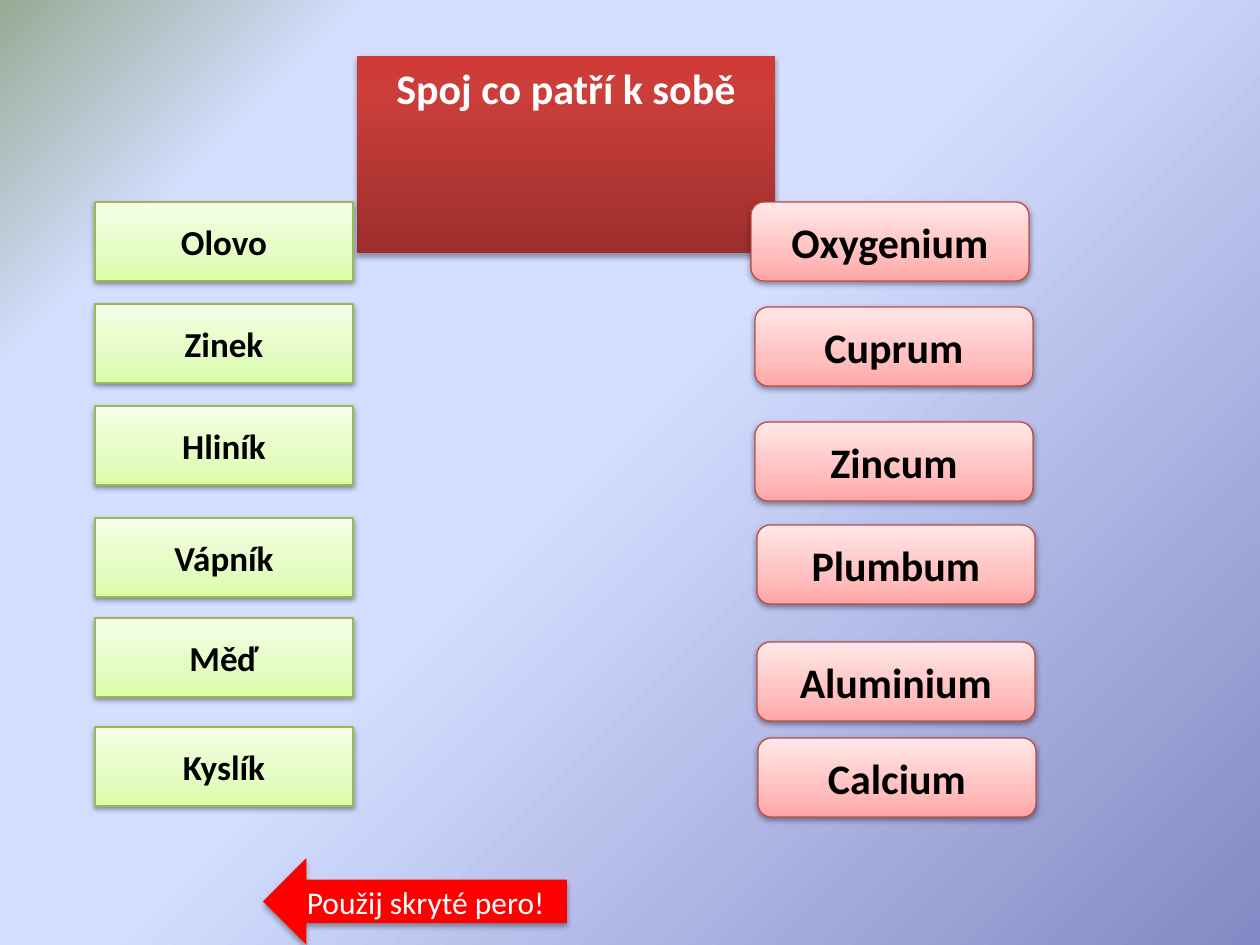
from pptx import Presentation, oxml, util as u
from pptx.dml.color import RGBColor
from pptx.enum import shapes, text
from pptx.oxml import ns

SCALE = 914400 / 126
FONT = "Calibri"
COLORS = {
    "white": "FFFFFF", "black": "000000", "arrow": "FF0000",
    "czech_line": "98B955", "latin_line": "BF4C48",
}
GRADIENTS = {
    "background": [(0, "8488C4"), (53, "D4DEFF"), (83, "D4DEFF"), (100, "96AB94")],
    "title": [(0, "9C2F2D"), (80, "CB3E3A"), (100, "CE3B37")],
    "czech": [(0, "DAFDA7"), (35, "E4FCC2"), (100, "F5FFE7")],
    "latin": [(0, "FFA6A5"), (35, "FFC0BF"), (100, "FFE7E7")],
}
UPWARD = '<a:lin ang="16200000" scaled="0"/>'
FROM_CORNER = '<a:path path="circle"><a:fillToRect l="100000" t="100000"/></a:path>'
CZECH_NAMES = [("Olovo", 202), ("Zinek", 304), ("Hliník", 406),
               ("Vápník", 518), ("Měď", 618), ("Kyslík", 727)]
LATIN_NAMES = [("Oxygenium", 751, 202), ("Cuprum", 755, 307), ("Zincum", 755, 422),
               ("Plumbum", 757, 525), ("Aluminium", 757, 642), ("Calcium", 758, 738)]


def px(value):
    return u.Emu(round(value * SCALE))


def color(name):
    return RGBColor.from_string(COLORS[name])


class SlideBuilder:
    def __init__(self, presentation):
        self.slide = presentation.slides.add_slide(presentation.slide_layouts[5])

    def gradient(self, fill, parent, name, direction):
        fill.background()
        stops = "".join(f'<a:gs pos="{position * 1000}"><a:srgbClr val="{value}"/></a:gs>'
                        for position, value in GRADIENTS[name])
        element = oxml.parse_xml(f'<a:gradFill {ns.nsdecls("a")} rotWithShape="1">'
                                 f'<a:gsLst>{stops}</a:gsLst>{direction}</a:gradFill>')
        parent.replace(parent.find(ns.qn("a:noFill")), element)

    def background(self):
        fill = self.slide.background.fill
        fill.background()
        parent = self.slide.element.find(".//" + ns.qn("p:bgPr"))
        self.gradient(fill, parent, "background", FROM_CORNER)

    def shadow(self, shape, distance, opacity):
        shape.shadow.inherit = False
        effects = shape.element.spPr.find(ns.qn("a:effectLst"))
        effects.append(oxml.parse_xml(
            f'<a:outerShdw {ns.nsdecls("a")} blurRad="40000" dist="{distance}" dir="5400000" '
            f'rotWithShape="0"><a:srgbClr val="{COLORS["black"]}">'
            f'<a:alpha val="{opacity * 1000}"/></a:srgbClr></a:outerShdw>'))

    def label(self, shape, words, size, color_name, bold, anchor=text.MSO_ANCHOR.MIDDLE):
        frame = shape.text_frame
        frame.text = words
        frame.word_wrap = True
        frame.vertical_anchor = anchor
        paragraph = frame.paragraphs[0]
        paragraph.alignment = text.PP_ALIGN.CENTER
        font = paragraph.runs[0].font
        font.name, font.size, font.bold = FONT, u.Pt(size), bold
        font.color.rgb = color(color_name)

    def title(self, words, left, top, width, height):
        shape = self.slide.shapes.title
        shape.left, shape.top, shape.width, shape.height = map(px, (left, top, width, height))
        self.gradient(shape.fill, shape.element.spPr, "title", UPWARD)
        self.shadow(shape, 23000, 35)
        self.label(shape, words, 24, "white", True, text.MSO_ANCHOR.TOP)
        shape.text_frame.auto_size = text.MSO_AUTO_SIZE.SHAPE_TO_FIT_TEXT

    def card(self, kind, style, words, size, left, top, width, height=79):
        shape = self.slide.shapes.add_shape(kind, *map(px, (left, top, width, height)))
        self.gradient(shape.fill, shape.element.spPr, style, UPWARD)
        shape.line.color.rgb = color(style + "_line")
        shape.line.width = u.Pt(0.75)
        self.shadow(shape, 20000, 38)
        self.label(shape, words, size, "black", True)

    def arrow(self, words, left, top, width, height):
        shape = self.slide.shapes.add_shape(
            shapes.MSO_SHAPE.LEFT_ARROW, *map(px, (left, top, width, height)))
        shape.fill.solid()
        shape.fill.fore_color.rgb = color("arrow")
        shape.line.fill.background()
        self.shadow(shape, 23000, 35)
        self.label(shape, words, 18, "white", False)


def main():
    presentation = Presentation()
    presentation.slide_width, presentation.slide_height = px(1260), px(945)
    builder = SlideBuilder(presentation)
    builder.background()
    builder.title("Spoj co patří k sobě", 357, 56, 418, 63)
    builder.arrow("Použij skryté pero!", 263, 858, 304, 87)
    for name, top in CZECH_NAMES:
        builder.card(shapes.MSO_SHAPE.RECTANGLE, "czech", name, 20, 95, top, 258)
    for name, left, top in LATIN_NAMES:
        builder.card(shapes.MSO_SHAPE.ROUNDED_RECTANGLE, "latin", name, 24, left, top, 278)
    presentation.save("out.pptx")


if __name__ == "__main__":
    main()
